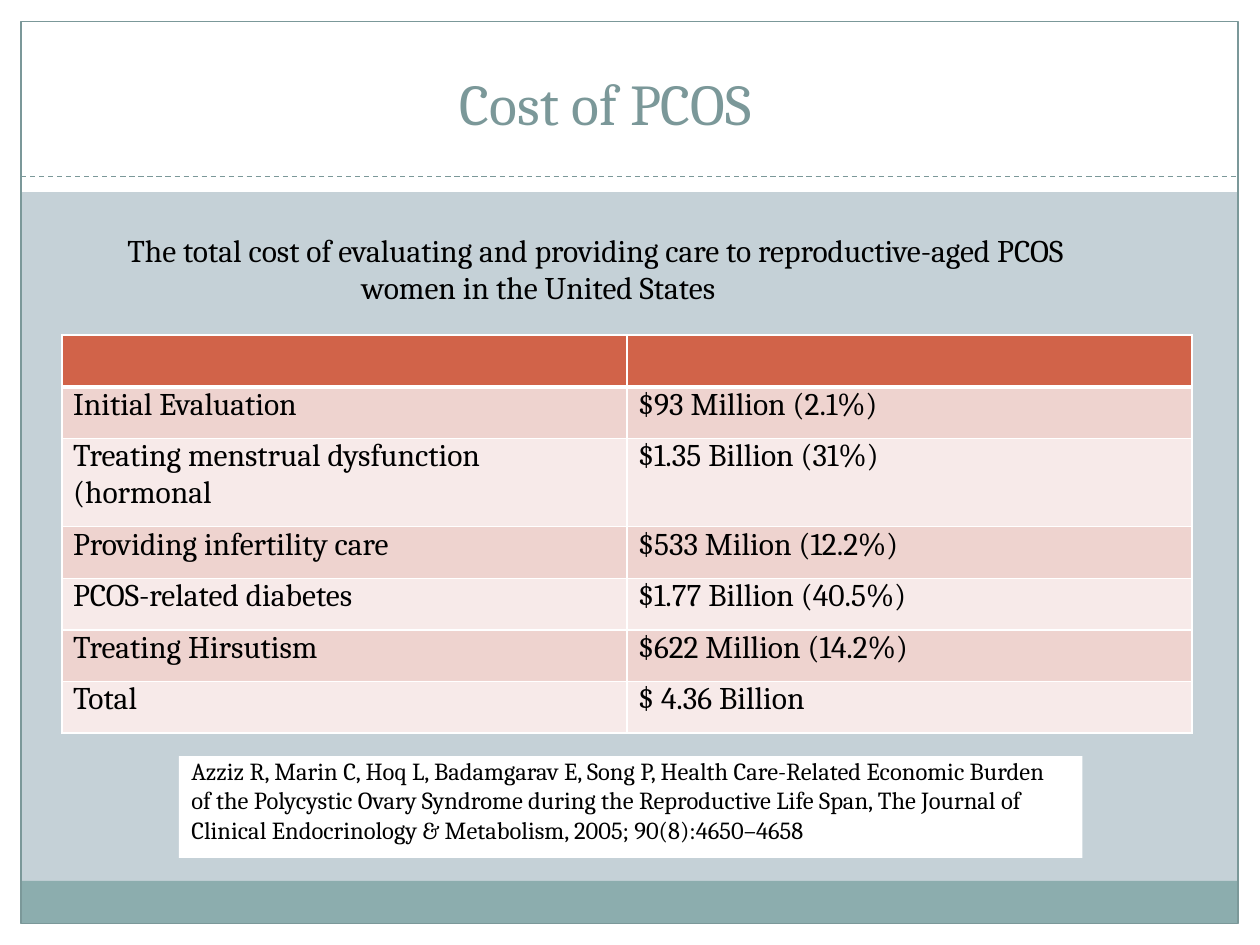
from dataclasses import dataclass
from lxml import etree
from pptx import Presentation
from pptx.dml.color import RGBColor
from pptx.enum.dml import MSO_LINE
from pptx.enum.shapes import MSO_CONNECTOR, MSO_SHAPE
from pptx.enum.text import MSO_ANCHOR, MSO_AUTO_SIZE, PP_ALIGN
from pptx.oxml.ns import qn
from pptx.util import Inches, Pt

RECTANGLE, STRAIGHT = MSO_SHAPE.RECTANGLE, MSO_CONNECTOR.STRAIGHT
DASH, TOP, LEFT, NO_FIT = MSO_LINE.DASH, MSO_ANCHOR.TOP, PP_ALIGN.LEFT, MSO_AUTO_SIZE.NONE

WIDTH, HEIGHT = Inches(10), Inches(7.5)
FONT = "Cambria"
WHITE, BLACK, TEAL = "FFFFFF", "000000", "7B9899"
PANEL, FOOTER = "C5D1D7", "8CADAE"
HEADER, BANDS = "D16349", ("EED3CF", "F7EAE9")

COSTS = [
    ("Initial Evaluation", "$93 Million (2.1%)"),
    ("Treating menstrual dysfunction (hormonal", "$1.35 Billion (31%)"),
    ("Providing infertility care", "$533 Milion (12.2%)"),
    ("PCOS-related diabetes", "$1.77 Billion (40.5%)"),
    ("Treating Hirsutism", "$622 Million (14.2%)"),
    ("Total", "$ 4.36 Billion"),
]
ROW_HEIGHT, TALL_ROW, TALL_HEIGHT = Inches(0.41), 2, Inches(0.7)


@dataclass(frozen=True)
class Box:
    """An area in percent of the slide's width and height."""
    left: float
    top: float
    width: float
    height: float

    def emu(self) -> tuple[int, int, int, int]:
        return (int(WIDTH * self.left / 100), int(HEIGHT * self.top / 100),
                int(WIDTH * self.width / 100), int(HEIGHT * self.height / 100))


def color(value: str) -> RGBColor:
    return RGBColor.from_string(value)


def add_rectangle(slide, box: Box, fill: str = "", line: str = ""):
    shape = slide.shapes.add_shape(RECTANGLE, *box.emu())
    shape.shadow.inherit = False
    if fill:
        shape.fill.solid()
        shape.fill.fore_color.rgb = color(fill)
    else:
        shape.fill.background()
    if line:
        shape.line.color.rgb = color(line)
        shape.line.width = Pt(0.75)
    else:
        shape.line.fill.background()
    return shape


def write(frame, text: str, size: float, ink: str = BLACK,
          margins: tuple[float, float, float] = (0, 0, 0)):
    """Fill a text frame; margins are left, top and right in inches."""
    frame.word_wrap, frame.auto_size, frame.vertical_anchor = True, NO_FIT, TOP
    frame.margin_left, frame.margin_top, frame.margin_right = map(Inches, margins)
    frame.margin_bottom = 0
    paragraph = frame.paragraphs[0]
    paragraph.text = text
    paragraph.alignment = LEFT
    paragraph.font.name, paragraph.font.size = FONT, Pt(size)
    paragraph.font.color.rgb = color(ink)
    return paragraph


def add_divider(slide, box: Box) -> None:
    left, top, width, height = box.emu()
    divider = slide.shapes.add_connector(STRAIGHT, left, top, left + width, top + height)
    divider.line.color.rgb = color(TEAL)
    divider.line.width = Pt(0.75)
    divider.line.dash_style = DASH
    etree.SubElement(divider._element.spPr, qn("a:effectLst"))


def style_cell(cell, fill: str, top: float, bottom: float) -> None:
    """Draw white borders, with widths in points, and then the fill."""
    properties = cell._tc.get_or_add_tcPr()
    for side, points in (("L", 1), ("R", 1), ("T", top), ("B", bottom)):
        border = etree.SubElement(properties, qn(f"a:ln{side}"), w=str(Pt(points)))
        solid = etree.SubElement(border, qn("a:solidFill"))
        etree.SubElement(solid, qn("a:srgbClr"), val=WHITE)
    cell.fill.solid()
    cell.fill.fore_color.rgb = color(fill)


def add_cost_table(slide, box: Box) -> None:
    rows = [("", ""), *COSTS]
    table = slide.shapes.add_table(len(rows), 2, *box.emu()).table
    for number, texts in enumerate(rows):
        table.rows[number].height = TALL_HEIGHT if number == TALL_ROW else ROW_HEIGHT
        fill = BANDS[(number - 1) % 2] if number else HEADER
        for column, text in enumerate(texts):
            cell = table.cell(number, column)
            style_cell(cell, fill, 3 if number == 1 else 1, 3 if number == 0 else 1)
            cell.margin_left = cell.margin_right = Inches(0.09)
            cell.margin_top = cell.margin_bottom = 0
            cell.vertical_anchor = TOP
            paragraph = cell.text_frame.paragraphs[0]
            paragraph.text = text
            paragraph.font.name, paragraph.font.size = FONT, Pt(18)
            paragraph.font.color.rgb = color(BLACK)


def main() -> None:
    deck = Presentation()
    deck.slide_width, deck.slide_height = WIDTH, HEIGHT
    slide = deck.slides.add_slide(deck.slide_layouts[5])

    # Backdrop: panel, footer band, frame and dashed divider
    add_rectangle(slide, Box(1.67, 20.33, 96.66, 77.33), fill=PANEL)
    add_rectangle(slide, Box(1.65, 93.2, 96.6, 4.5), fill=FOOTER)
    add_rectangle(slide, Box(1.67, 2.27, 96.6, 95.47), line=TEAL)
    add_divider(slide, Box(1.67, 18.67, 96.6, 0))

    # Title
    title = slide.shapes.title
    title.left, title.top, title.width, title.height = Box(4.5, 2.53, 90.9, 13.47).emu()
    write(title.text_frame, "Cost of PCOS", 33, TEAL, margins=(3.2, 0.35, 0))

    # Introduction with a hanging indent
    introduction = slide.shapes.add_textbox(*Box(10, 24.4, 75.5, 7.73).emu())
    sentence = write(
        introduction.text_frame,
        "The total cost of evaluating and providing care to reproductive-aged PCOS "
        "women in the United States", 18)
    indents = sentence._p.get_or_add_pPr()
    indents.set("marL", str(Inches(1.87)))
    indents.set("indent", str(Inches(-1.86)))

    # Costs
    add_cost_table(slide, Box(4.9, 35.47, 89.7, 42.13))

    # Citation
    citation = add_rectangle(slide, Box(14.2, 80, 71.7, 10.8), fill=WHITE)
    write(
        citation.text_frame,
        "Azziz R, Marin C, Hoq L, Badamgarav E, Song P, Health Care-Related Economic "
        "Burden of the Polycystic Ovary Syndrome during the Reproductive Life Span, "
        "The Journal of Clinical Endocrinology & Metabolism, 2005; 90(8):4650–4658",
        14, margins=(0.1, 0, 0.1))

    deck.save("out.pptx")


if __name__ == "__main__":
    main()
